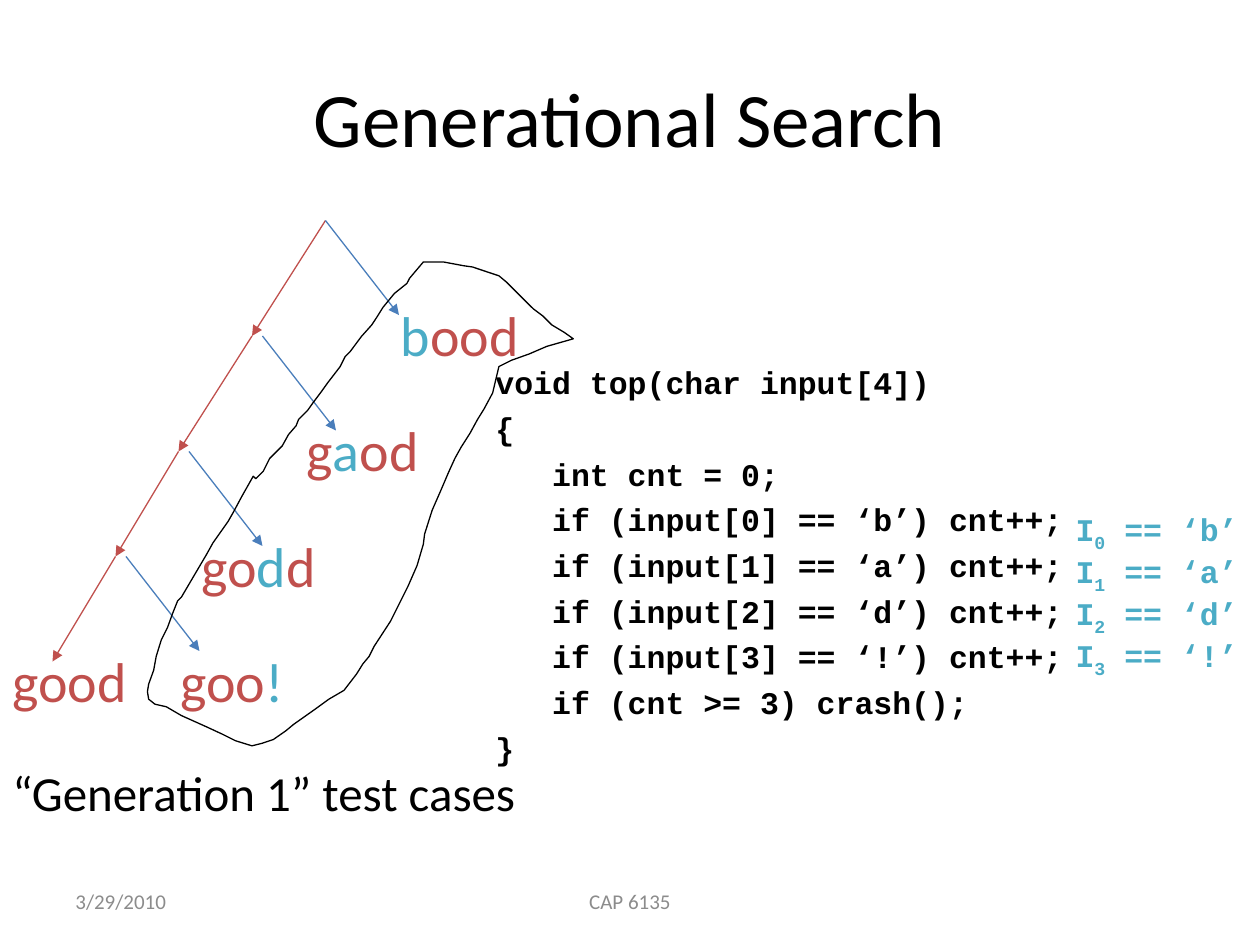
from lxml.etree import SubElement
from pptx import Presentation
from pptx.dml.color import RGBColor
from pptx.enum.shapes import MSO_CONNECTOR
from pptx.enum.text import MSO_ANCHOR, PP_ALIGN
from pptx.oxml.ns import qn
from pptx.util import Pt

COLORS = {
    "black": "000000",
    "red": "C0504D",
    "blue": "4A7EBB",
    "aqua": "4BACC6",
    "gray": "8C8C8C",
}
TREE_NODES = [(186, 0), (144, 66), (102, 132), (66, 192), (30, 252)]
TREE_WORDS = [
    (222, 42, [("b", "aqua"), ("ood", "red")]),
    (168, 108, [("g", "red"), ("a", "aqua"), ("od", "red")]),
    (108, 174, [("go", "red"), ("d", "aqua"), ("d", "red")]),
    (96, 240, [("goo", "red"), ("!", "aqua")]),
    (0, 240, [("good", "red")]),
]
CHECKS = ["b", "a", "d", "!"]
OUTLINE_UNIT = Pt(0.72)
OUTLINE = [
    (219, 1), (208, 14), (206, 18), (196, 26), (187, 37), (182, 45),
    (178, 51), (170, 60), (161, 72), (157, 76), (153, 84), (143, 97),
    (138, 104), (132, 112), (127, 119), (120, 126), (118, 131), (112, 138),
    (107, 147), (97, 157), (92, 167), (86, 173), (84, 171), (75, 187),
    (68, 200), (64, 207), (52, 224), (47, 233), (37, 250), (27, 267),
    (24, 270), (20, 280), (16, 291), (11, 301), (7, 314), (5, 325),
    (1, 336), (0, 342), (1, 348), (6, 352), (15, 354), (27, 361), (47, 370),
    (60, 376), (70, 381), (83, 385), (91, 383), (100, 380), (110, 373),
    (116, 368), (133, 356), (144, 348), (156, 341), (166, 328), (171, 320),
    (176, 314), (180, 306), (193, 286), (202, 268), (207, 258), (214, 242),
    (219, 225), (220, 217), (226, 198), (233, 182), (239, 168), (244, 157),
    (249, 148), (256, 137), (262, 126), (267, 118), (274, 105), (278, 88),
    (279, 84), (289, 79), (303, 74), (317, 68), (338, 62), (331, 57),
    (321, 51), (314, 44), (306, 38), (299, 31), (292, 24), (285, 17),
    (279, 12), (270, 9), (258, 5), (251, 4), (235, 1),
]


def color(name):
    return RGBColor.from_string(COLORS[name])


def style_font(font, name, size, color_name, bold=False):
    font.name = name
    font.size = Pt(size)
    font.bold = bold
    font.color.rgb = color(color_name)


def add_text_box(slide, left, top, width, height):
    shape = slide.shapes.add_textbox(Pt(left), Pt(top), Pt(width), Pt(height))
    shape.text_frame.word_wrap = True
    return shape.text_frame


def add_label(slide, box, text, size, color_name, alignment=PP_ALIGN.LEFT,
              anchor=MSO_ANCHOR.TOP):
    frame = add_text_box(slide, *box)
    frame.vertical_anchor = anchor
    paragraph = frame.paragraphs[0]
    paragraph.text = text
    paragraph.alignment = alignment
    style_font(paragraph.font, "Calibri", size, color_name)


def add_arrow(slide, start, end, color_name):
    points = [Pt(value) for value in (*start, *end)]
    connector = slide.shapes.add_connector(MSO_CONNECTOR.STRAIGHT, *points)
    connector.line.color.rgb = color(color_name)
    connector.line.width = Pt(0.75)
    SubElement(connector.line._get_or_add_ln(), qn("a:tailEnd"), type="triangle")
    SubElement(connector._element.spPr, qn("a:effectLst"))


def add_title(slide, left, top, width, height):
    title = slide.shapes.title
    title.left, title.top = Pt(left), Pt(top)
    title.width, title.height = Pt(width), Pt(height)
    title.text_frame.text = "Generational Search"
    paragraph = title.text_frame.paragraphs[0]
    paragraph.alignment = PP_ALIGN.CENTER
    style_font(paragraph.font, "Calibri", 44, "black")


def add_search_tree(slide, left, top):
    nodes = [(left + x, top + y) for x, y in TREE_NODES]
    for start, end in zip(nodes, nodes[1:]):
        add_arrow(slide, start, end, "red")
    for index, (x, y) in enumerate(nodes[:-1]):
        branch = x + (6 if index else 0)
        add_arrow(slide, (branch, y), (branch + 42, y + 54), "blue")
    for x, y, parts in TREE_WORDS:
        paragraph = add_text_box(slide, left + x, top + y, 120, 46).paragraphs[0]
        for text, color_name in parts:
            run = paragraph.add_run()
            run.text = text
            style_font(run.font, "Calibri", 32, color_name)


def add_code(slide, left, top, width, height):
    lines = [(0, "void top(char input[4])"), (0, "{"), (1, "int cnt = 0;")]
    lines += [(1, f"if (input[{index}] == ‘{letter}’) cnt++;")
              for index, letter in enumerate(CHECKS)]
    lines += [(1, "if (cnt >= 3) crash();"), (0, "}")]
    frame = add_text_box(slide, left, top, width, height)
    for index, (level, text) in enumerate(lines):
        paragraph = frame.add_paragraph() if index else frame.paragraphs[0]
        paragraph.text = text
        paragraph.space_before = Pt(4.5 if index else 0)
        paragraph._p.get_or_add_pPr().set("marL", str(Pt(32.4 * level)))
        style_font(paragraph.font, "Courier New", 18, "black", True)


def add_constraints(slide, left, top, width, height):
    for index, letter in enumerate(CHECKS):
        frame = add_text_box(slide, left, top + 24 * index, width, height)
        paragraph = frame.paragraphs[0]
        paragraph.space_before = Pt(4.5)
        style_font(paragraph.font, "Courier New", 18, "aqua", True)
        for text in ("I", str(index), f" == ‘{letter}’"):
            run = paragraph.add_run()
            run.text = text
            if text == str(index):
                run.font._element.set("baseline", "-25000")


def add_generation_outline(slide, left, top):
    builder = slide.shapes.build_freeform(*OUTLINE[0], scale=OUTLINE_UNIT)
    builder.add_line_segments(OUTLINE[1:], close=True)
    shape = builder.convert_to_shape(Pt(left), Pt(top))
    shape.shadow.inherit = False
    shape.fill.background()
    shape.line.color.rgb = color("black")
    shape.line.width = Pt(0.75)


def add_footer(slide, top, height):
    add_label(slide, (36, top, 168, height), "3/29/2010", 12, "gray",
              anchor=MSO_ANCHOR.MIDDLE)
    add_label(slide, (246, top, 228, height), "CAP 6135", 12, "gray",
              PP_ALIGN.CENTER, MSO_ANCHOR.MIDDLE)


def main():
    presentation = Presentation()
    presentation.slide_width, presentation.slide_height = Pt(720), Pt(540)
    slide = presentation.slides.add_slide(presentation.slide_layouts[5])
    add_title(slide, 36, 21.6, 648, 90)
    add_search_tree(slide, 0, 126)
    add_label(slide, (0, 432, 354, 41), "“Generation 1” test cases", 28, "black")
    add_code(slide, 276, 204, 408, 240)
    add_constraints(slide, 607.5, 288, 112.5, 12)
    add_generation_outline(slide, 84.25, 149)
    add_footer(slide, 500.5, 28.75)
    presentation.save("out.pptx")


if __name__ == "__main__":
    main()
